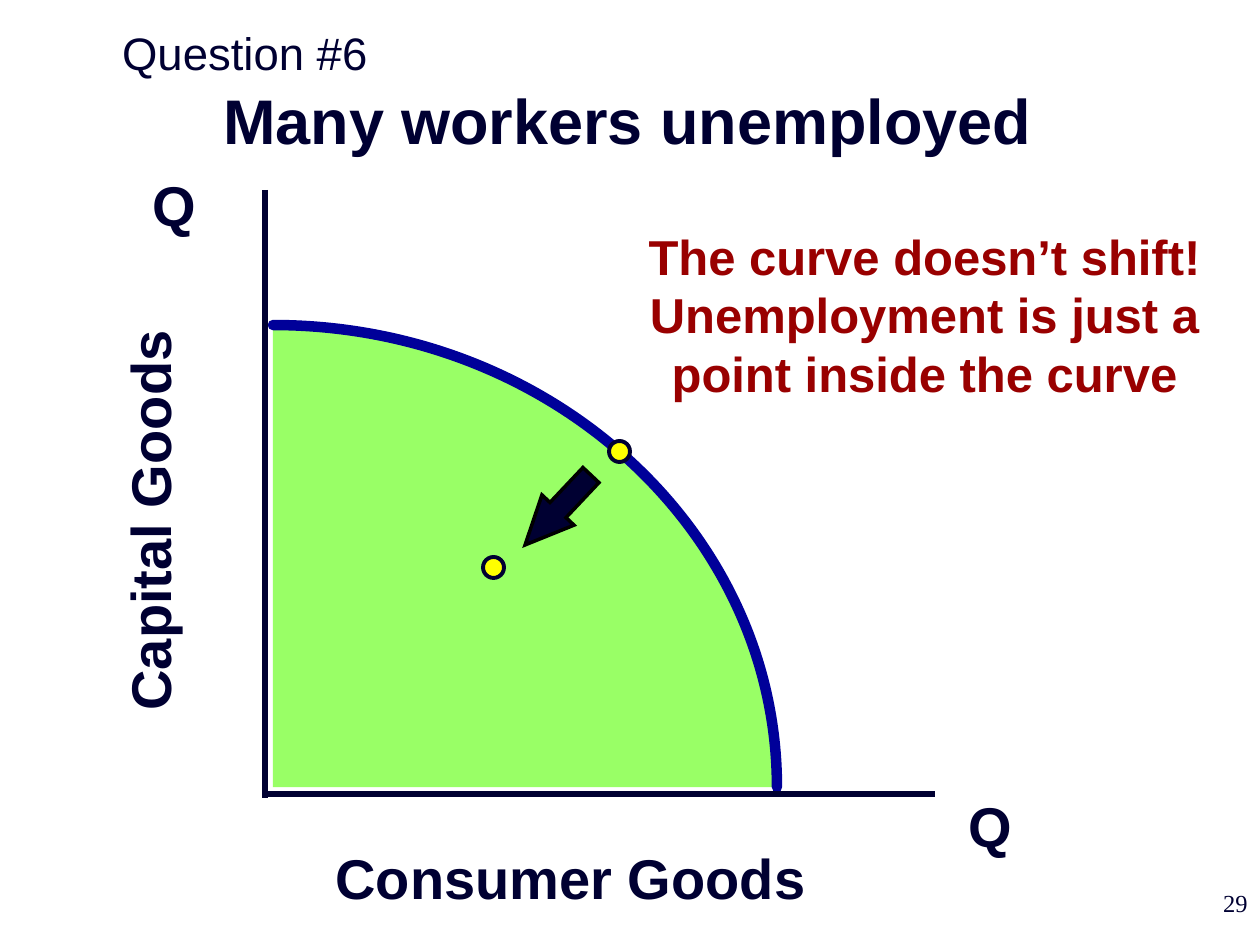
import dataclasses
import pptx
import pptx.util
import pptx.dml.color
import pptx.enum.shapes
import pptx.enum.text
import pptx.oxml

SCALE = 914400 / 126
SPACE = 'xmlns:a="http://schemas.openxmlformats.org/drawingml/2006/main"'
ROUND = 0.5523  # handle length of a quarter ellipse, as part of its radius
KIND = pptx.enum.shapes.MSO_SHAPE
ALIGN = pptx.enum.text.PP_ALIGN


@dataclasses.dataclass(frozen=True)
class Theme:
    ink: str = "000032"
    black: str = "000000"
    area: str = "99FF66"
    curve: str = "000099"
    dot: str = "FFFF00"
    note: str = "990000"
    sans: str = "Arial"
    serif: str = "Times New Roman"
    title: int = 36
    label: int = 32
    remark: int = 28
    head: int = 26
    page: int = 14


THEME = Theme()


def px(size):
    return pptx.util.Emu(round(size * SCALE))


def rgb(code):
    return pptx.dml.color.RGBColor.from_string(code)


def node(text):
    return pptx.oxml.parse_xml(text)


def paint(shape, fill, line, width):
    shape.shadow.inherit = False
    shape.fill.solid()
    shape.fill.fore_color.rgb = rgb(fill)
    shape.line.color.rgb = rgb(line)
    shape.line.width = pptx.util.Pt(width)


def add_text(slide, box, lines, size, color=THEME.ink, font=THEME.sans,
             bold=True, align=ALIGN.CENTER, wrap=True, turn=0, gap=None):
    shape = slide.shapes.add_textbox(*map(px, box))
    shape.rotation = turn
    frame = shape.text_frame
    frame.text = "\n".join(lines)
    frame.word_wrap = wrap
    for para in frame.paragraphs:
        para.alignment = align
        para.line_spacing = gap
        for run in para.runs:
            run.font.name = font
            run.font.size = pptx.util.Pt(size)
            run.font.bold = bold
            run.font.color.rgb = rgb(color)


def add_axis(group, ends):
    axis = group.shapes.add_connector(
        pptx.enum.shapes.MSO_CONNECTOR.STRAIGHT, *map(px, ends))
    axis.line.color.rgb = rgb(THEME.ink)
    axis.line.width = pptx.util.Pt(4)
    axis._element.spPr.append(node(f"<a:effectLst {SPACE}/>"))


def point(left, top):
    return f'<a:pt x="{px(left)}" y="{px(top)}"/>'


def add_curve(slide, left, top, wide, high):
    """Quarter ellipse: an open outlined arc over a filled sector."""
    pen = slide.shapes.build_freeform(left, top, scale=SCALE)
    pen.add_line_segments([(left + wide, top + high), (left, top + high)])
    shape = pen.convert_to_shape()
    paint(shape, THEME.area, THEME.curve, 6)
    line = shape.line._get_or_add_ln()
    line.set("cap", "rnd")
    line.append(node(f"<a:round {SPACE}/>"))

    arc = (f"<a:moveTo>{point(0, 0)}</a:moveTo><a:cubicBezTo>"
           + point(wide * ROUND, 0) + point(wide, high * (1 - ROUND))
           + point(wide, high) + "</a:cubicBezTo>")
    sector = (f"{arc}<a:lnTo>{point(0, high)}</a:lnTo>"
              f"<a:lnTo>{point(0, 0)}</a:lnTo><a:close/>")
    paths = shape._element.spPr.custGeom.pathLst
    for old in list(paths):
        paths.remove(old)
    for flag, steps in (('fill="none"', arc), ('stroke="0"', sector)):
        paths.append(node(f'<a:path {SPACE} w="{px(wide)}" h="{px(high)}" '
                          f'{flag}>{steps}</a:path>'))


def add_dot(slide, left, top):
    dot = slide.shapes.add_shape(KIND.OVAL, *map(px, (left, top, 21, 21)))
    paint(dot, THEME.dot, THEME.ink, 2.25)


def add_arrow(slide, box, turn):
    arrow = slide.shapes.add_shape(KIND.RIGHT_ARROW, *map(px, box))
    arrow.adjustments[0] = 0.5
    arrow.adjustments[1] = 1.09
    arrow.rotation = turn
    paint(arrow, THEME.ink, THEME.black, 2)
    arrow.line._get_or_add_ln().append(
        node(f'<a:miter {SPACE} lim="800000"/>'))


def main():
    deck = pptx.Presentation()
    deck.slide_width, deck.slide_height = px(1260), px(945)
    slide = deck.slides.add_slide(deck.slide_layouts[6])

    add_curve(slide, 273, 325, 504, 462)
    add_text(slide, (105, 84, 1045, 81), ["Many workers unemployed"],
             THEME.title, gap=0.9)
    axes = slide.shapes.add_group_shape()
    add_axis(axes, (265, 190, 265, 798))
    add_axis(axes, (263, 794, 935, 794))
    for left, top in ((140, 164), (956, 785)):
        add_text(slide, (left, top, 68, 79), ["Q"], THEME.label,
                 align=ALIGN.LEFT, wrap=False)
    add_text(slide, (-62, 480, 423, 81), ["Capital Goods"], THEME.label,
             wrap=False, turn=270)
    add_text(slide, (312, 837, 533, 81), ["Consumer Goods "], THEME.label,
             wrap=False)
    add_arrow(slide, (510, 488, 96, 44), 133.3)
    add_text(slide, (998, 882, 262, 63), ["29"], THEME.page,
             font=THEME.serif, bold=False, align=ALIGN.RIGHT)
    add_dot(slide, 483, 557)
    add_text(slide, (620, 220, 609, 190),
             ["The curve doesn’t shift!",
              "Unemployment is just a point inside the curve"],
             THEME.remark, THEME.note)
    add_dot(slide, 609, 441)
    add_text(slide, (-243, 19, 976, 68), ["Question #6"], THEME.head,
             bold=False)
    deck.save("out.pptx")


if __name__ == "__main__":
    main()
